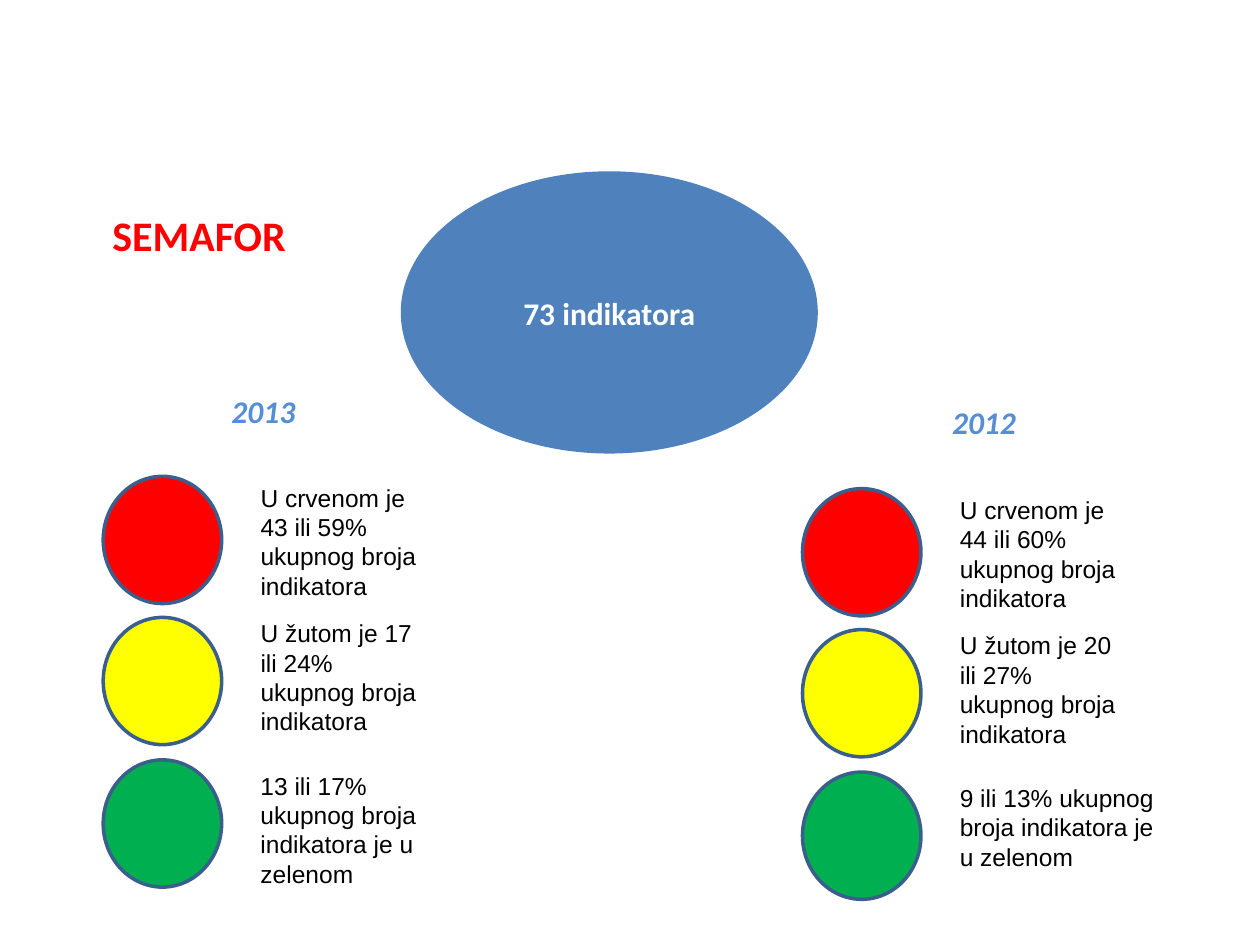
from pptx import Presentation
from pptx.dml.color import RGBColor
from pptx.enum.shapes import MSO_SHAPE
from pptx.enum.text import MSO_ANCHOR, PP_ALIGN
from pptx.util import Pt

RED = RGBColor(0xFF, 0x00, 0x00)
YELLOW = RGBColor(0xFF, 0xFF, 0x00)
GREEN = RGBColor(0x00, 0xB0, 0x50)
BLUE = RGBColor(0x4F, 0x81, 0xBD)
OUTLINE = RGBColor(0x3A, 0x5F, 0x8C)
YEAR_BLUE = RGBColor(0x55, 0x8E, 0xD5)
WHITE = RGBColor(0xFF, 0xFF, 0xFF)
BLACK = RGBColor(0x00, 0x00, 0x00)

# colour, light offset, label offset, label width, label height
LIGHTS = [
    (RED, 0, 0, 104.4, 74.9),
    (YELLOW, 80.6, 77.5, 104.4, 74.9),
    (GREEN, 162, 164.6, 129.6, 74.9),
]
YEARS = [
    ("2013", (106.6, 220.3), (59, 272.2), [
        "U crvenom je 43 ili 59% ukupnog broja indikatora",
        "U žutom je 17 ili 24% ukupnog broja indikatora",
        "13 ili 17% ukupnog broja indikatora je u zelenom",
    ]),
    ("2012", (518.4, 226.8), (458.6, 279.2), [
        "U crvenom je 44 ili 60% ukupnog broja indikatora",
        "U žutom je 20 ili 27% ukupnog broja indikatora",
        "9 ili 13% ukupnog broja indikatora je u zelenom",
    ]),
]


def write_text(shape, text, *, size, color, font="Calibri", bold=False,
               italic=False, align=PP_ALIGN.CENTER, anchor=MSO_ANCHOR.TOP):
    """Put one formatted paragraph into a shape."""
    frame = shape.text_frame
    frame.word_wrap = True
    frame.vertical_anchor = anchor
    frame.text = text
    paragraph = frame.paragraphs[0]
    paragraph.alignment = align
    run_font = paragraph.runs[0].font
    run_font.name = font
    run_font.size = Pt(size)
    run_font.bold = bold
    run_font.italic = italic
    run_font.color.rgb = color


def add_label(slide, text, left, top, width, height, **text_format):
    """Add a text box with formatted text."""
    label = slide.shapes.add_textbox(Pt(left), Pt(top), Pt(width), Pt(height))
    write_text(label, text, **text_format)


def add_ellipse(slide, left, top, width, height, fill, outline=None):
    """Add a filled ellipse, outlined when an outline colour is given."""
    ellipse = slide.shapes.add_shape(
        MSO_SHAPE.OVAL, Pt(left), Pt(top), Pt(width), Pt(height))
    ellipse.shadow.inherit = False
    ellipse.fill.solid()
    ellipse.fill.fore_color.rgb = fill
    if outline is None:
        ellipse.line.fill.background()
    else:
        ellipse.line.color.rgb = outline
        ellipse.line.width = Pt(2)
    return ellipse


def add_traffic_light(slide, left, top, statements):
    """Add the three lights of one year with their statements."""
    for light, statement in zip(LIGHTS, statements):
        color, light_offset, label_offset, width, height = light
        add_ellipse(slide, left, top + light_offset, 67.7, 72.7, color, OUTLINE)
        add_label(slide, statement, left + 82.8, top + label_offset, width,
                  height, size=14, color=BLACK, font="Arial",
                  align=PP_ALIGN.LEFT)


def add_title(slide, text):
    """Place and format the title placeholder."""
    title = slide.shapes.title
    title.left, title.top = Pt(20.9), Pt(115.9)
    title.width, title.height = Pt(185.8), Pt(55.4)
    write_text(title, text, size=24, color=RED, bold=True)


def main():
    """Build the slide and save it."""
    presentation = Presentation()
    presentation.slide_width, presentation.slide_height = Pt(720), Pt(540)
    slide = presentation.slides.add_slide(presentation.slide_layouts[5])
    add_title(slide, "SEMAFOR")
    total = add_ellipse(slide, 229, 97.9, 238.3, 161.3, BLUE)
    write_text(total, "73 indikatora", size=18, color=WHITE, bold=True,
               anchor=MSO_ANCHOR.MIDDLE)
    for year, (year_left, year_top), (left, top), statements in YEARS:
        add_traffic_light(slide, left, top, statements)
        add_label(slide, year, year_left, year_top, 87.8, 28.8, size=18,
                  color=YEAR_BLUE, bold=True, italic=True)
    presentation.save("out.pptx")


if __name__ == "__main__":
    main()
